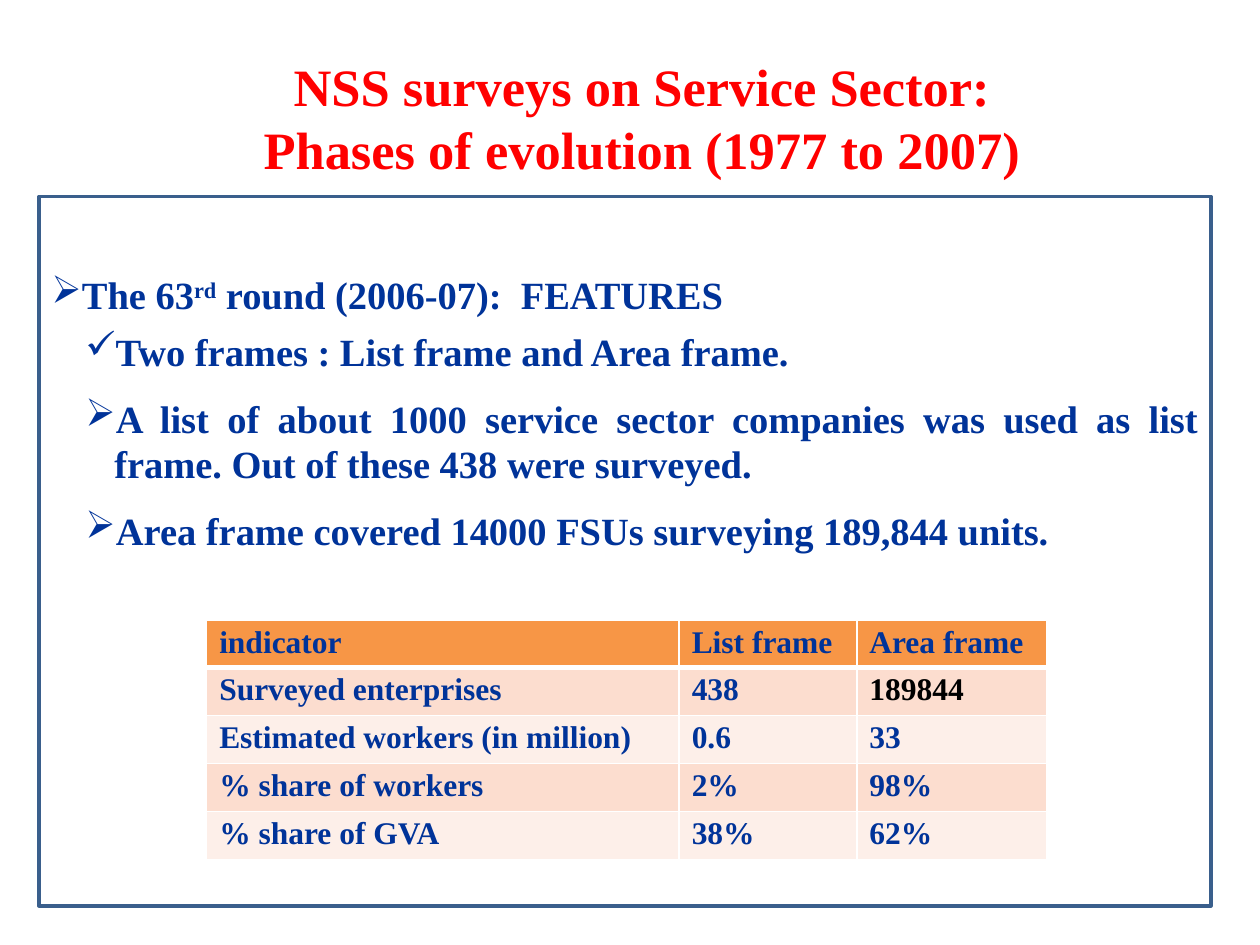
from pptx import Presentation
from pptx.dml.color import RGBColor
from pptx.enum.shapes import MSO_SHAPE
from pptx.enum.text import MSO_ANCHOR, PP_ALIGN
from pptx.oxml import parse_xml
from pptx.oxml.ns import nsdecls
from pptx.util import Inches, Pt

RECT = MSO_SHAPE.RECTANGLE
TOP, MIDDLE = MSO_ANCHOR.TOP, MSO_ANCHOR.MIDDLE
LEFT, CENTER, JUSTIFY = PP_ALIGN.LEFT, PP_ALIGN.CENTER, PP_ALIGN.JUSTIFY

COLORS = {
    "title": "FF0000", "text": "003399", "black": "000000", "white": "FFFFFF",
    "frame": "3A5F8C", "header": "F79646", "band1": "FCDDCF", "band2": "FDEFE9",
}


def rgb(name):
    return RGBColor.from_string(COLORS[name])


class SlideBuilder:
    font = "Times New Roman"

    def __init__(self, slide):
        self.s = slide

    def run(self, p, text, size, color="text", superscript=False):
        r = p.add_run()
        r.text = text
        for name, value in {"name": self.font, "size": Pt(size), "bold": True}.items():
            setattr(r.font, name, value)
        r.font.color.rgb = rgb(color)
        if superscript:
            r.font._element.set("baseline", "30000")

    def paragraph(self, p, **formats):
        for name, value in formats.items():
            setattr(p, name, value)

    def frame(self, tf, **formats):
        for name, value in {"word_wrap": True, **formats}.items():
            setattr(tf, name, value)

    def bullet(self, p, char, margin, indent):
        pPr = p._p.get_or_add_pPr()
        pPr.set("marL", str(Inches(margin)))
        pPr.set("indent", str(Inches(indent)))
        pPr.append(parse_xml(f'<a:buChar {nsdecls("a")} char="{char}"/>'))

    def title(self, lines, box):
        sp = self.s.shapes.add_textbox(*map(Inches, box))
        self.frame(sp.text_frame, vertical_anchor=MIDDLE)
        p = sp.text_frame.paragraphs[0]
        self.paragraph(p, alignment=CENTER, line_spacing=Pt(36))
        for i, line in enumerate(lines):
            if i:
                p.add_line_break()
            self.run(p, line, 30, "title")

    def bullet_panel(self, items, box):
        sp = self.s.shapes.add_shape(RECT, *map(Inches, box))
        sp.shadow.inherit = False
        sp.fill.solid()
        sp.fill.fore_color.rgb = rgb("white")
        sp.line.color.rgb = rgb("frame")
        sp.line.width = Pt(2)
        tf = sp.text_frame
        self.frame(tf, vertical_anchor=TOP, margin_top=Inches(0.6))
        for i, (char, level, gap, runs) in enumerate(items):
            p = tf.add_paragraph() if i else tf.paragraphs[0]
            self.paragraph(p, alignment=JUSTIFY, level=level,
                           line_spacing=Pt(26), space_after=Pt(gap))
            self.bullet(p, char, *((0.5, -0.23) if level else (0, 0)))
            for j, text in enumerate(runs):
                self.run(p, text, 22, superscript=j == 1)

    def borders(self, cell, widths):
        tcPr = cell._tc.get_or_add_tcPr()
        for i, (side, width) in enumerate(widths.items()):
            tcPr.insert(i, parse_xml(
                f'<a:ln{side} {nsdecls("a")} w="{Pt(width)}"><a:solidFill>'
                f'<a:srgbClr val="{COLORS["white"]}"/></a:solidFill></a:ln{side}>'))

    def table(self, rows, col_widths, row_height, left, top, special):
        sp = self.s.shapes.add_table(
            len(rows), len(col_widths), Inches(left), Inches(top),
            Inches(sum(col_widths)), Inches(row_height * len(rows)))
        tbl = sp.table
        for col, width in zip(tbl.columns, col_widths):
            col.width = Inches(width)
        for i, row in enumerate(rows):
            tbl.rows[i].height = Inches(row_height)
            fill = ("band1" if i % 2 else "band2") if i else "header"
            # A thick rule separates the header from the body
            widths = {"L": 1, "R": 1, "T": 3 if i == 1 else 1, "B": 1 if i else 3}
            for j, text in enumerate(row):
                cell = tbl.cell(i, j)
                cell.margin_top = cell.margin_bottom = Inches(0.04)
                cell.fill.solid()
                cell.fill.fore_color.rgb = rgb(fill)
                self.borders(cell, widths)
                p = cell.text_frame.paragraphs[0]
                p.alignment = LEFT
                self.run(p, text, 18, special.get((i, j), "text"))


def main():
    prs = Presentation()
    prs.slide_width, prs.slide_height = Inches(10), Inches(7.5)
    b = SlideBuilder(prs.slides.add_slide(prs.slide_layouts[6]))

    # Title
    b.title(["NSS surveys on Service Sector:", "Phases of evolution (1977 to 2007)"],
            (0.5, 0.3, 9.19, 1.25))

    # Features: bullet, level, gap after, runs
    b.bullet_panel([
        ("➢", 0, 6.5, ["The 63", "rd", " round (2006-07):  FEATURES"]),
        ("✓", 1, 12, ["Two frames : List frame and Area frame."]),
        ("➢", 1, 12, ["A list of about 1000 service sector companies was used as "
                      "list frame. Out of these 438 were surveyed."]),
        ("➢", 1, 0, ["Area frame covered 14000 FSUs surveying 189,844 units."]),
    ], (0.31, 1.56, 9.3, 5.63))

    # Comparison of the two frames
    b.table([
        ("indicator", "List frame", "Area frame"),
        ("Surveyed enterprises", "438", "189844"),
        ("Estimated workers (in million)", "0.6", "33"),
        ("% share of workers", "2%", "98%"),
        ("% share of GVA", "38%", "62%"),
    ], (3.75, 1.41, 1.51), 0.38, 1.64, 4.92, {(1, 2): "black"})

    prs.save("out.pptx")


if __name__ == "__main__":
    main()
